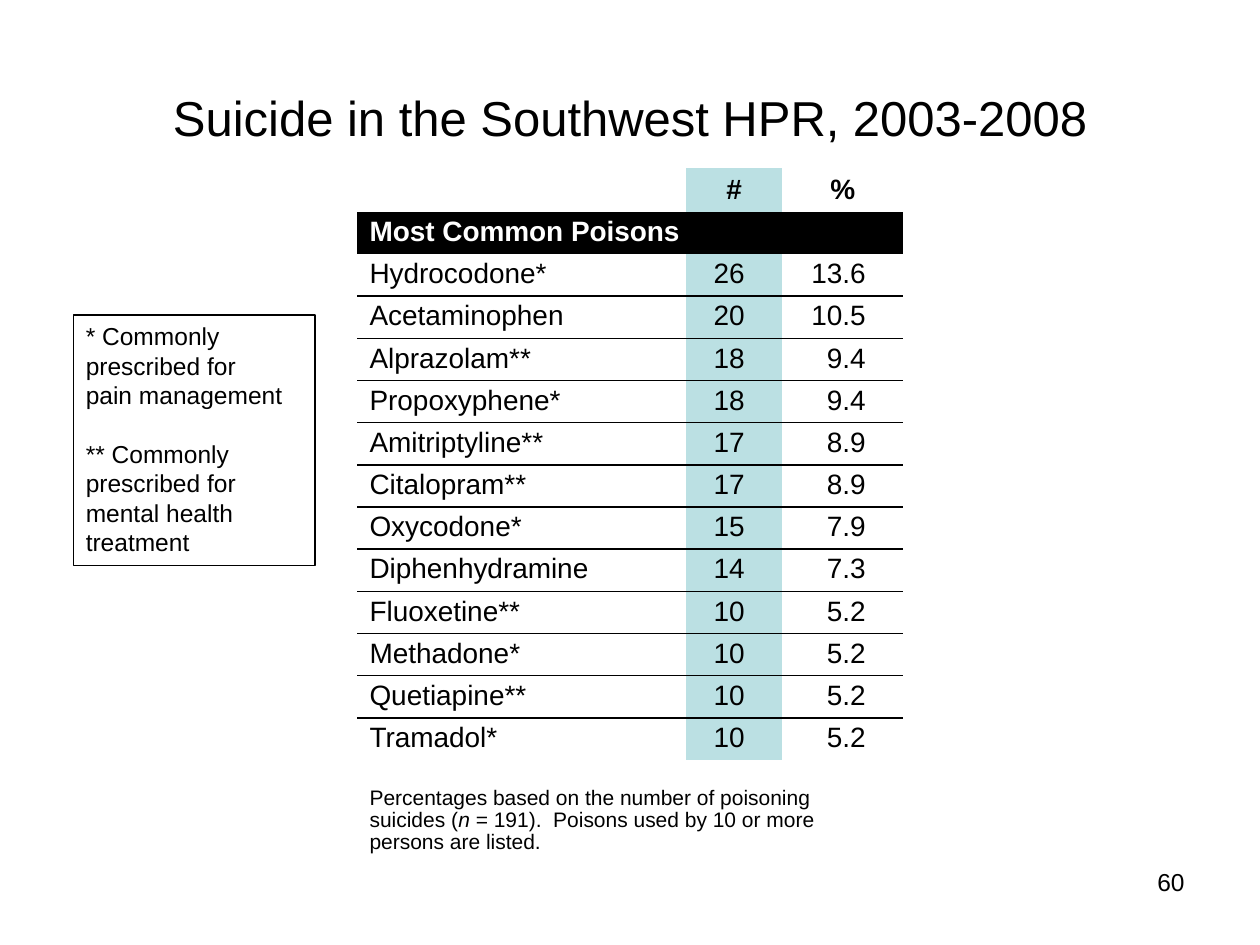
from lxml import etree
from pptx import Presentation
from pptx.dml.color import RGBColor
from pptx.enum.shapes import MSO_SHAPE
from pptx.enum.text import MSO_ANCHOR, MSO_AUTO_SIZE, PP_ALIGN
from pptx.oxml.ns import qn
from pptx.util import Cm, Pt

LEFT, CENTER, RIGHT = PP_ALIGN.LEFT, PP_ALIGN.CENTER, PP_ALIGN.RIGHT
TOP, MIDDLE, BOTTOM = MSO_ANCHOR.TOP, MSO_ANCHOR.MIDDLE, MSO_ANCHOR.BOTTOM
RECT = MSO_SHAPE.RECTANGLE
GROW = MSO_AUTO_SIZE.SHAPE_TO_FIT_TEXT
NO_GRID_STYLE = "{2D5ABB26-0587-4C30-8999-92F81FD0307C}"

POISONS = [
    ("Hydrocodone*", "26", "13.6"),
    ("Acetaminophen", "20", "10.5"),
    ("Alprazolam**", "18", "9.4"),
    ("Propoxyphene*", "18", "9.4"),
    ("Amitriptyline**", "17", "8.9"),
    ("Citalopram**", "17", "8.9"),
    ("Oxycodone*", "15", "7.9"),
    ("Diphenhydramine", "14", "7.3"),
    ("Fluoxetine**", "10", "5.2"),
    ("Methadone*", "10", "5.2"),
    ("Quetiapine**", "10", "5.2"),
    ("Tramadol*", "10", "5.2"),
]
FOOTNOTE = [
    ("Percentages based on the number of poisoning suicides (", False),
    ("n ", True),
    ("= 191).  Poisons used by 10 or more persons are listed.", False),
]
NOTES = [
    "* Commonly prescribed for",
    "pain management",
    "** Commonly prescribed for mental health treatment",
]


def rgb(value):
    return RGBColor.from_string(value)


def add_text(p, text, size=14, color="000000", bold=False, align=LEFT,
             spacing=None, after=None):
    p.alignment = align
    p.line_spacing = spacing
    if after:
        p.space_after = Pt(after)
    runs = [(text, False)] if isinstance(text, str) else text
    for content, italic in runs:
        r = p.add_run()
        r.text = content
        r.font.name = "Arial"
        r.font.size = Pt(size)
        r.font.bold = bold
        r.font.italic = italic
        r.font.color.rgb = rgb(color)


class Deck:
    black, white, accent = "000000", "FFFFFF", "BBE0E3"

    def __init__(self):
        self.prs = Presentation()
        self.prs.slide_width, self.prs.slide_height = Cm(25.4), Cm(19.05)
        self.s = self.prs.slides.add_slide(self.prs.slide_layouts[6])

    def text_box(self, box, text, anchor=TOP, **style):
        tf = self.s.shapes.add_textbox(*map(Cm, box)).text_frame
        tf.word_wrap = True
        tf.vertical_anchor = anchor
        add_text(tf.paragraphs[0], text, **style)

    def note_box(self, box, lines, gap_after):
        sp = self.s.shapes.add_shape(RECT, *map(Cm, box))
        sp.shadow.inherit = False
        sp.fill.background()
        sp.line.color.rgb = rgb(self.black)
        sp.line.width = Pt(0.75)
        tf = sp.text_frame
        tf.word_wrap = True
        tf.vertical_anchor = TOP
        tf.auto_size = GROW
        for i, line in enumerate(lines):
            p = tf.add_paragraph() if i else tf.paragraphs[0]
            add_text(p, line, after=16.8 if i == gap_after else None)

    def table(self, left, top, widths, heights):
        frame = self.s.shapes.add_table(
            len(heights), len(widths), Cm(left), Cm(top),
            Cm(sum(widths)), Cm(sum(heights)))
        table = frame.table
        table.first_row = table.horz_banding = False
        table._tbl.tblPr.find(qn("a:tableStyleId")).text = NO_GRID_STYLE
        for column, width in zip(table.columns, widths):
            column.width = Cm(width)
        for row, height in zip(table.rows, heights):
            row.height = Cm(height)
        return table

    def cell(self, cell, text="", fill=None, right=0.76, rule=False, **style):
        cell.vertical_anchor = BOTTOM
        cell.margin_left, cell.margin_right = Cm(0.25), Cm(right)
        cell.margin_top = Cm(0.05 if text else 0)
        cell.margin_bottom = Cm(0.13 if text else 0)
        if fill:
            cell.fill.solid()
            cell.fill.fore_color.rgb = rgb(fill)
        else:
            cell.fill.background()
        p = cell.text_frame.paragraphs[0]
        if text:
            add_text(p, text, spacing=0.95, **style)
        else:
            etree.SubElement(p._p, qn("a:endParaRPr"), sz="400")
        if rule:
            self.bottom_rule(cell)

    def bottom_rule(self, cell):
        ln = etree.Element(qn("a:lnB"), w=str(Pt(1)))
        fill = etree.SubElement(ln, qn("a:solidFill"))
        etree.SubElement(fill, qn("a:srgbClr"), val=self.black)
        cell._tc.get_or_add_tcPr().insert(0, ln)

    def poison_table(self):
        heights = [0.89] + [0.85] * (len(POISONS) + 1) + [0.4, 1.58]
        table = self.table(7.2, 3.38, [6.63, 1.94, 2.44], heights)
        fills = [None, self.accent, None]
        for col, text in enumerate(["", "#", "%"]):
            self.cell(table.cell(0, col), text, fills[col], right=0.25,
                      size=16, bold=True, align=CENTER)
        for row, values in enumerate(POISONS, 2):
            for col, text in enumerate(values):
                self.cell(table.cell(row, col), text, fills[col],
                          rule=row <= len(POISONS), size=16,
                          align=RIGHT if col else LEFT)
        last = len(heights) - 1
        for col in range(3):
            self.cell(table.cell(last - 1, col))
        for row in (1, last):
            table.cell(row, 0).merge(table.cell(row, 2))
        self.cell(table.cell(1, 0), "Most Common Poisons", self.black,
                  size=16, color=self.white, bold=True)
        self.cell(table.cell(last, 0), FOOTNOTE, size=12)


def main():
    deck = Deck()
    deck.text_box((18.21, 17.35, 5.92, 1.32), "60", align=RIGHT)
    deck.text_box((1.27, 0.76, 22.86, 3.18),
                  "Suicide in the Southwest HPR, 2003-2008",
                  anchor=MIDDLE, size=28, align=CENTER)
    deck.poison_table()
    deck.note_box((1.48, 6.35, 4.87, 5.05), NOTES, gap_after=1)
    deck.prs.save("out.pptx")


if __name__ == "__main__":
    main()
